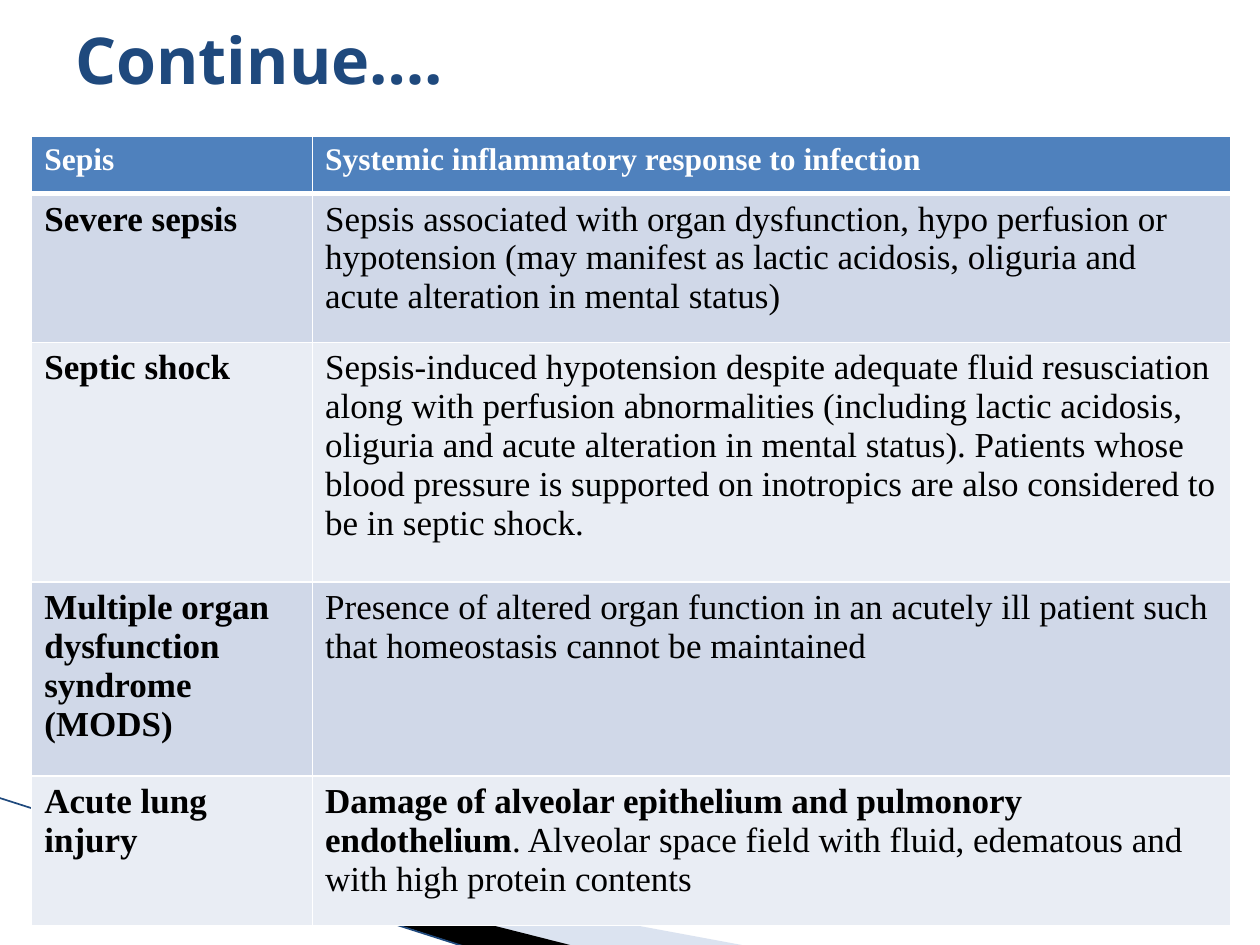
from dataclasses import dataclass

from lxml import etree
from pptx import Presentation
from pptx.dml.color import RGBColor
from pptx.enum.shapes import MSO_CONNECTOR
from pptx.enum.text import MSO_ANCHOR
from pptx.oxml.ns import qn
from pptx.util import Cm, Pt

STRAIGHT = MSO_CONNECTOR.STRAIGHT
MIDDLE = MSO_ANCHOR.MIDDLE

SERIF = "Times New Roman"
WHITE, BLACK, NAVY = "FFFFFF", "000000", "1F497D"
HEADER_FILL = "4F81BD"
BAND_FILLS = ("D0D8E8", "E9EDF4")
COLUMN_WIDTHS = (5.66, 18.52)


@dataclass
class Definition:
    term: str
    meaning: str
    height: float
    lead: str = ""


@dataclass
class Wedge:
    frame: tuple[float, float, float, float]
    points: list[tuple[float, float]]
    fill: str
    opacity: int = 100


DEFINITIONS = [
    Definition("Sepis", "", 1.16, lead="Systemic inflammatory response to infection"),
    Definition(
        "Severe sepsis",
        "Sepsis associated with organ dysfunction, hypo perfusion or hypotension "
        "(may manifest as lactic acidosis, oliguria and acute alteration in mental status)",
        3.0,
    ),
    Definition(
        "Septic shock",
        "Sepsis-induced hypotension despite adequate fluid resusciation along with "
        "perfusion abnormalities (including lactic acidosis, oliguria and acute "
        "alteration in mental status). Patients whose blood pressure is supported on "
        "inotropics are also considered to be in septic shock.",
        4.83,
    ),
    Definition(
        "Multiple organ dysfunction syndrome (MODS)",
        "Presence of altered organ function in an acutely ill patient such that "
        "homeostasis cannot be maintained",
        3.91,
    ),
    Definition(
        "Acute lung injury",
        ". Alveolar space field with fluid, edematous and with high protein contents",
        3.02,
        lead="Damage of alveolar epithelium and pulmonory endothelium",
    ),
]

WEDGES = [
    Wedge((1.98, 13.89, 10.57, 4.01),
          [(1.4, 16.54), (15.11, 19.08), (11.58, 19.08), (1.4, 16.51)], "A7B9DB", 40),
    Wedge((-0.15, 16.08, 10.57, 2.34),
          [(1.35, 16.48), (11.61, 19.08), (9.45, 19.1), (1.37, 16.51)], BLACK),
]


def color(value: str) -> RGBColor:
    return RGBColor.from_string(value)


def add_span(para, text: str, *, size: float, fill: str, font: str = SERIF,
             bold: bool = False) -> None:
    span = para.add_run()
    span.text = text
    span.font.name = font
    span.font.size = Pt(size)
    span.font.bold = bold
    span.font.color.rgb = color(fill)


def set_frame(shape, frame: tuple[float, float, float, float]) -> None:
    """Change the frame of a freeform while its outline stays in place."""
    old_left, old_top = shape.left, shape.top
    shape.left, shape.top, shape.width, shape.height = map(Cm, frame)
    outline = next(shape._element.iter(qn("a:path")))
    outline.set("w", str(shape.width))
    outline.set("h", str(shape.height))
    for point in outline.iter(qn("a:pt")):
        point.set("x", str(int(point.get("x")) + old_left - shape.left))
        point.set("y", str(int(point.get("y")) + old_top - shape.top))


def add_wedge(page, wedge: Wedge) -> None:
    start, *others = [(Cm(x), Cm(y)) for x, y in wedge.points]
    builder = page.shapes.build_freeform(*start, scale=1.0)
    builder.add_line_segments(others, close=True)
    shape = builder.convert_to_shape()
    set_frame(shape, wedge.frame)
    shape.shadow.inherit = False
    shape.line.fill.background()
    shape.fill.solid()
    shape.fill.fore_color.rgb = color(wedge.fill)
    if wedge.opacity < 100:
        tint = shape.fill._xPr.find(qn("a:solidFill"))[0]
        etree.SubElement(tint, qn("a:alpha"), val=str(wedge.opacity * 1000))


def add_slope(page) -> None:
    """Draw the thin line along the edge of the wedges."""
    line = page.shapes.add_connector(STRAIGHT, Cm(-0.03), Cm(16.08), Cm(9.42), Cm(19.1))
    line.line.color.rgb = color(NAVY)
    line.line.width = Pt(0.95)
    etree.SubElement(line._element.spPr, qn("a:effectLst"))


def set_borders(cell, **widths: float) -> None:
    """Give a cell white borders; widths in points are keyed by side L, R, T, B."""
    properties = cell._tc.get_or_add_tcPr()
    for side, width in widths.items():
        border = etree.SubElement(properties, qn(f"a:ln{side}"), w=str(Pt(width)))
        solid = etree.SubElement(border, qn("a:solidFill"))
        etree.SubElement(solid, qn("a:srgbClr"), val=WHITE)


def add_definitions(page, definitions: list[Definition]) -> None:
    height = sum(item.height for item in definitions)
    table = page.shapes.add_table(
        len(definitions), len(COLUMN_WIDTHS),
        Cm(0.64), Cm(2.74), Cm(sum(COLUMN_WIDTHS)), Cm(height),
    ).table
    for column, width in zip(table.columns, COLUMN_WIDTHS):
        column.width = Cm(width)
    for index, item in enumerate(definitions):
        header = index == 0
        size, ink = (18, WHITE) if header else (20, BLACK)
        fill = HEADER_FILL if header else BAND_FILLS[(index - 1) % 2]
        table.rows[index].height = Cm(item.height)
        contents = [[(item.term, True)], [(item.lead, True), (item.meaning, False)]]
        for column, spans in enumerate(contents):
            cell = table.cell(index, column)
            set_borders(cell, L=1, R=1, T=3 if index == 1 else 1, B=3 if header else 1)
            cell.fill.solid()
            cell.fill.fore_color.rgb = color(fill)
            for text, bold in spans:
                if text:
                    add_span(cell.text_frame.paragraphs[0], text,
                             size=size, fill=ink, bold=bold)


def add_title(page, text: str) -> None:
    box = page.shapes.add_textbox(Cm(1.27), Cm(0.77), Cm(20.75), Cm(0.81))
    frame = box.text_frame
    frame.word_wrap = True
    frame.vertical_anchor = MIDDLE
    add_span(frame.paragraphs[0], text, size=36.9, fill=NAVY, font="Noto Sans", bold=True)


def main() -> None:
    deck = Presentation()
    deck.slide_width, deck.slide_height = Cm(25.4), Cm(19.05)
    page = deck.slides.add_slide(deck.slide_layouts[6])
    for wedge in WEDGES:
        add_wedge(page, wedge)
    add_slope(page)
    add_definitions(page, DEFINITIONS)
    add_title(page, "Continue….")
    deck.save("out.pptx")


if __name__ == "__main__":
    main()
